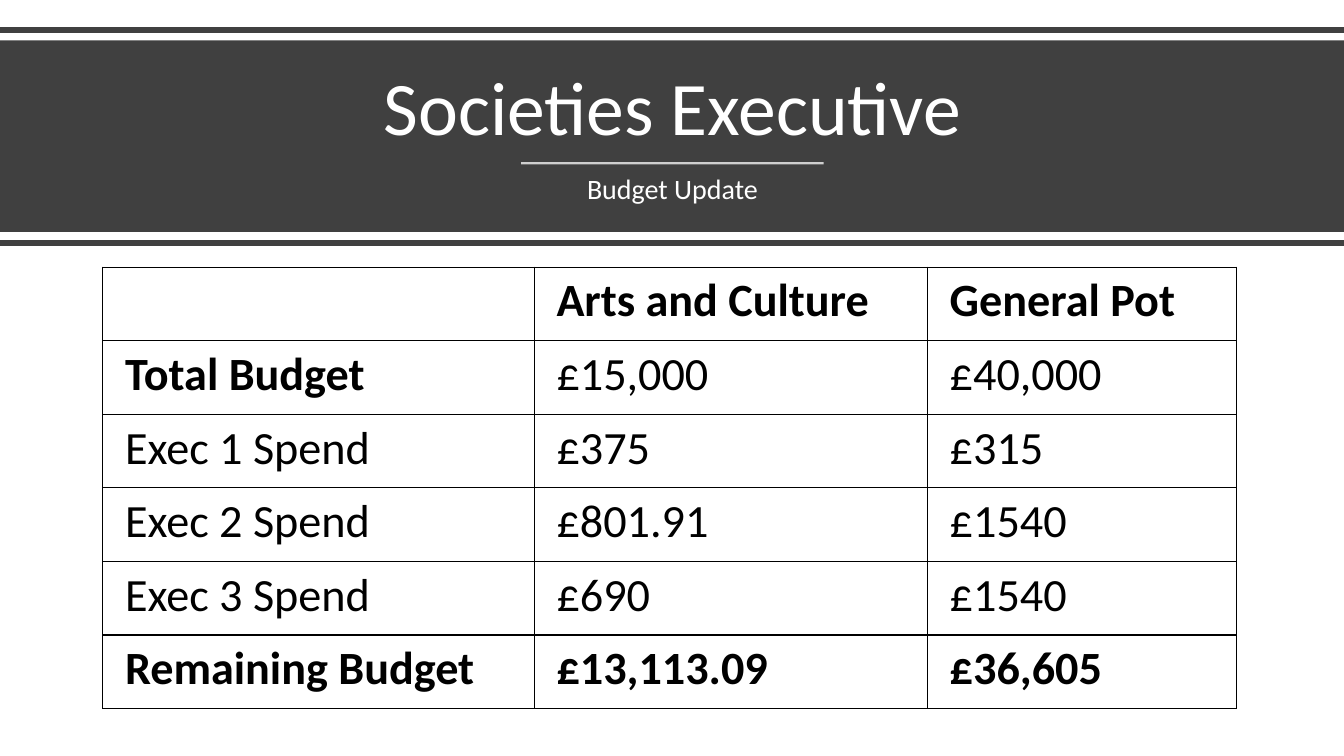
"""Build the Societies Executive budget update slide."""
from lxml.etree import SubElement
from pptx import Presentation
from pptx.dml.color import RGBColor
from pptx.enum.shapes import MSO_CONNECTOR, MSO_SHAPE
from pptx.enum.text import MSO_ANCHOR, PP_ALIGN
from pptx.oxml.ns import qn
from pptx.util import Pt

PX = 9144
DARK, WHITE, BLACK = "404040", "FFFFFF", "000000"


def color(value):
    return RGBColor.from_string(value)


def write(frame, text, size, ink, align, spacing, bold=False, after=0):
    frame.word_wrap = True
    paragraph = frame.paragraphs[0]
    paragraph.text = text
    paragraph.alignment = align
    paragraph.line_spacing = spacing
    paragraph.space_before = Pt(0)
    paragraph.space_after = Pt(after)
    font = paragraph.runs[0].font
    font.name, font.size, font.bold = "Calibri", Pt(size), bold
    font.color.rgb = color(ink)


presentation = Presentation()
presentation.slide_width = 1333 * PX
presentation.slide_height = 750 * PX
slide = presentation.slides.add_slide(presentation.slide_layouts[0])
slide.background.fill.solid()
slide.background.fill.fore_color.rgb = color(WHITE)
title, subtitle = slide.placeholders

band = slide.shapes.add_shape(MSO_SHAPE.RECTANGLE, 0, 40 * PX, 1333 * PX, 190 * PX)
band.shadow.inherit = False
band.fill.solid()
band.fill.fore_color.rgb = color(DARK)
band.line.fill.background()
slide.shapes[0].element.addprevious(band.element)

headings = [
    (title, "Societies Executive", 54, (58, 54, 1218, 102), MSO_ANCHOR.BOTTOM),
    (subtitle, "Budget Update", 20, (167, 169, 1000, 46), MSO_ANCHOR.TOP),
]
for shape, text, size, (left, top, width, height), anchor in headings:
    shape.left, shape.top = left * PX, top * PX
    shape.width, shape.height = width * PX, height * PX
    shape.text_frame.vertical_anchor = anchor
    write(shape.text_frame, text, size, WHITE, PP_ALIGN.CENTER, 0.9)

rules = [
    (0, 1333, 30, DARK, 4, 100),
    (517, 817, 162, WHITE, 1.5, 75),
    (0, 1333, 241, DARK, 4, 100),
]
for start, end, top, ink, weight, opacity in rules:
    rule = slide.shapes.add_connector(
        MSO_CONNECTOR.STRAIGHT, start * PX, top * PX, end * PX, top * PX)
    rule.line.color.rgb = color(ink)
    rule.line.width = Pt(weight)
    if opacity < 100:
        ink_element = rule.element.spPr.find(".//" + qn("a:srgbClr"))
        SubElement(ink_element, qn("a:alpha"), val=str(opacity * 1000))
    SubElement(rule.element.spPr, qn("a:effectLst"))

budget = [
    ("", "Arts and Culture", "General Pot"),
    ("Total Budget", "£15,000", "£40,000"),
    ("Exec 1 Spend", "£375", "£315"),
    ("Exec 2 Spend", "£801.91", "£1540"),
    ("Exec 3 Spend", "£690", "£1540"),
    ("Remaining Budget", "£13,113.09", "£36,605"),
]
column_widths = [428, 390, 306]
row_height = 73
table = slide.shapes.add_table(
    len(budget), len(column_widths), 102 * PX, 265 * PX,
    sum(column_widths) * PX, len(budget) * row_height * PX).table
table.horz_banding = False
for column, width in zip(table.columns, column_widths):
    column.width = width * PX

for row_index, values in enumerate(budget):
    table.rows[row_index].height = row_height * PX
    for column_index, text in enumerate(values):
        cell = table.cell(row_index, column_index)
        cell.margin_left = cell.margin_right = 22 * PX
        cell.margin_top, cell.margin_bottom = 3 * PX, 0
        properties = cell._tc.get_or_add_tcPr()
        for side in ("lnL", "lnR", "lnT", "lnB"):
            border = SubElement(properties, qn(f"a:{side}"), w=str(Pt(1)))
            fill = SubElement(border, qn("a:solidFill"))
            SubElement(fill, qn("a:srgbClr"), val=BLACK)
        cell.fill.background()
        if text:
            bold = row_index in (0, len(budget) - 1) or text == "Total Budget"
            write(cell.text_frame, text, 33, BLACK, PP_ALIGN.JUSTIFY, 1.05,
                  bold=bold, after=8)

presentation.save("out.pptx")
